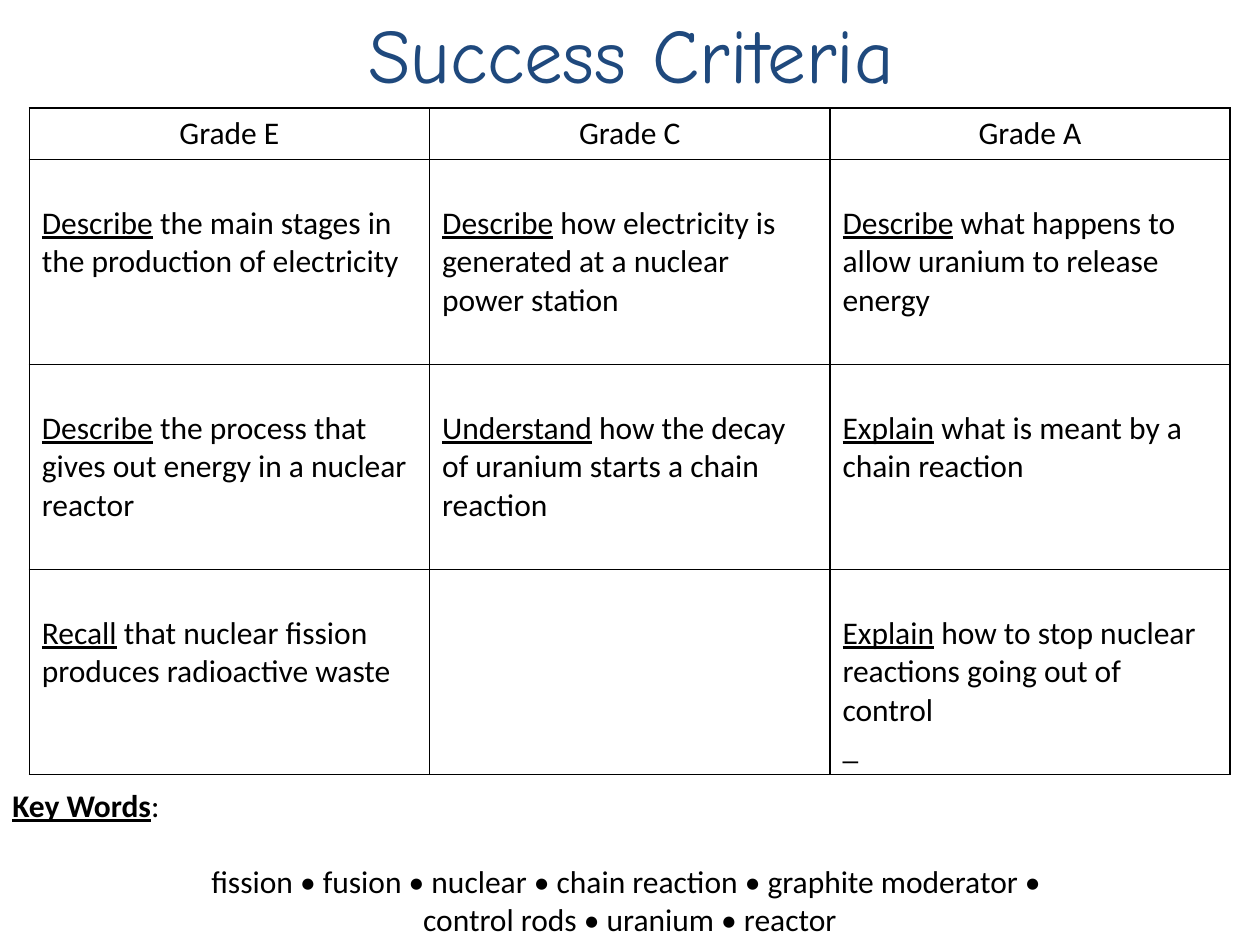
"""Build a slide of success criteria by grade, with key words below."""
import dataclasses

import pptx
import pptx.dml.color
import pptx.enum.text
import pptx.oxml
import pptx.oxml.ns
import pptx.util

Cm = pptx.util.Cm
Pt = pptx.util.Pt
MID = pptx.enum.text.PP_ALIGN.CENTER


@dataclasses.dataclass(frozen=True)
class Theme:
    ink: str = "000000"
    blue: str = "1F497D"
    head: str = "Comic Neue"
    body: str = "Calibri"
    big: int = 44
    small: int = 18
    rule: int = 1


def write(par, text, font, size, color, bold=False, line=False):
    run = par.add_run()
    run.text = text
    run.font.name = font
    run.font.size = Pt(size)
    run.font.color.rgb = pptx.dml.color.RGBColor.from_string(color)
    run.font.bold = bold
    run.font.underline = line


class Page:
    def __init__(self, deck, theme):
        self.theme = theme
        self.slide = deck.slides.add_slide(deck.slide_layouts[6])
        self.plain = dict(font=theme.body, size=theme.small, color=theme.ink)

    def box(self, left, top, width, height):
        frame = self.slide.shapes.add_textbox(
            Cm(left), Cm(top), Cm(width), Cm(height)).text_frame
        frame.word_wrap = True
        return frame

    def title(self, text):
        par = self.box(1.3, 0, 22.86, 3.18).paragraphs[0]
        par.alignment = MID
        write(par, text, self.theme.head, self.theme.big, self.theme.blue)

    def edge(self, cell):
        props = cell._tc.get_or_add_tcPr()
        for side in "LRTB":
            props.append(pptx.oxml.parse_xml(
                f'<a:ln{side} {pptx.oxml.ns.nsdecls("a")} w="{Pt(self.theme.rule)}">'
                f'<a:solidFill><a:srgbClr val="{self.theme.ink}"/></a:solidFill>'
                f'</a:ln{side}>'))
        cell.fill.background()

    def goal(self, cell, text):
        cell.margin_top = Cm(0.9)
        frame = cell.text_frame
        verb, gap, rest = text.partition(" ")
        write(frame.paragraphs[0], verb, line=True, **self.plain)
        write(frame.paragraphs[0], gap + rest, **self.plain)

    def table(self, heads, goals):
        grid = self.slide.shapes.add_table(
            len(goals) + 1, len(heads), Cm(0.59), Cm(2.18), Cm(24.21), Cm(13.43)).table
        grid.first_row = grid.horz_banding = False
        for col in grid.columns:
            col.width = Cm(8.07)
        for num, row in enumerate(grid.rows):
            row.height = Cm(4.13 if num else 1.04)
        for cell in grid.iter_cells():
            self.edge(cell)
        for num, head in enumerate(heads):
            par = grid.cell(0, num).text_frame.paragraphs[0]
            par.alignment = MID
            write(par, head, **self.plain)
        for down, row in enumerate(goals, 1):
            for num, text in enumerate(row):
                if text:
                    self.goal(grid.cell(down, num), text)
        last = grid.cell(len(goals), len(heads) - 1).text_frame.add_paragraph()
        write(last, "_", **self.plain)

    def words(self, label, lines):
        frame = self.box(0, 15.72, 25.4, 3.33)
        write(frame.paragraphs[0], label, bold=True, line=True, **self.plain)
        write(frame.paragraphs[0], ":", **self.plain)
        for num, text in enumerate(lines):
            par = frame.add_paragraph()
            par.alignment = MID
            par.space_before = Pt(0 if num else 22)
            write(par, text, **self.plain)


def main():
    deck = pptx.Presentation()
    deck.slide_width, deck.slide_height = Cm(25.4), Cm(19.05)
    page = Page(deck, Theme())
    page.title("Success Criteria")
    page.table(
        ["Grade E", "Grade C", "Grade A"],
        [
            ["Describe the main stages in the production of electricity",
             "Describe how electricity is generated at a nuclear power station",
             "Describe what happens to allow uranium to release energy"],
            ["Describe the process that gives out energy in a nuclear reactor",
             "Understand how the decay of uranium starts a chain reaction",
             "Explain what is meant by a chain reaction"],
            ["Recall that nuclear fission produces radioactive waste",
             "",
             "Explain how to stop nuclear reactions going out of control"],
        ])
    page.words("Key Words", [
        "fission • fusion • nuclear • chain reaction • graphite moderator • ",
        "control rods • uranium • reactor"])
    deck.save("out.pptx")


if __name__ == "__main__":
    main()
